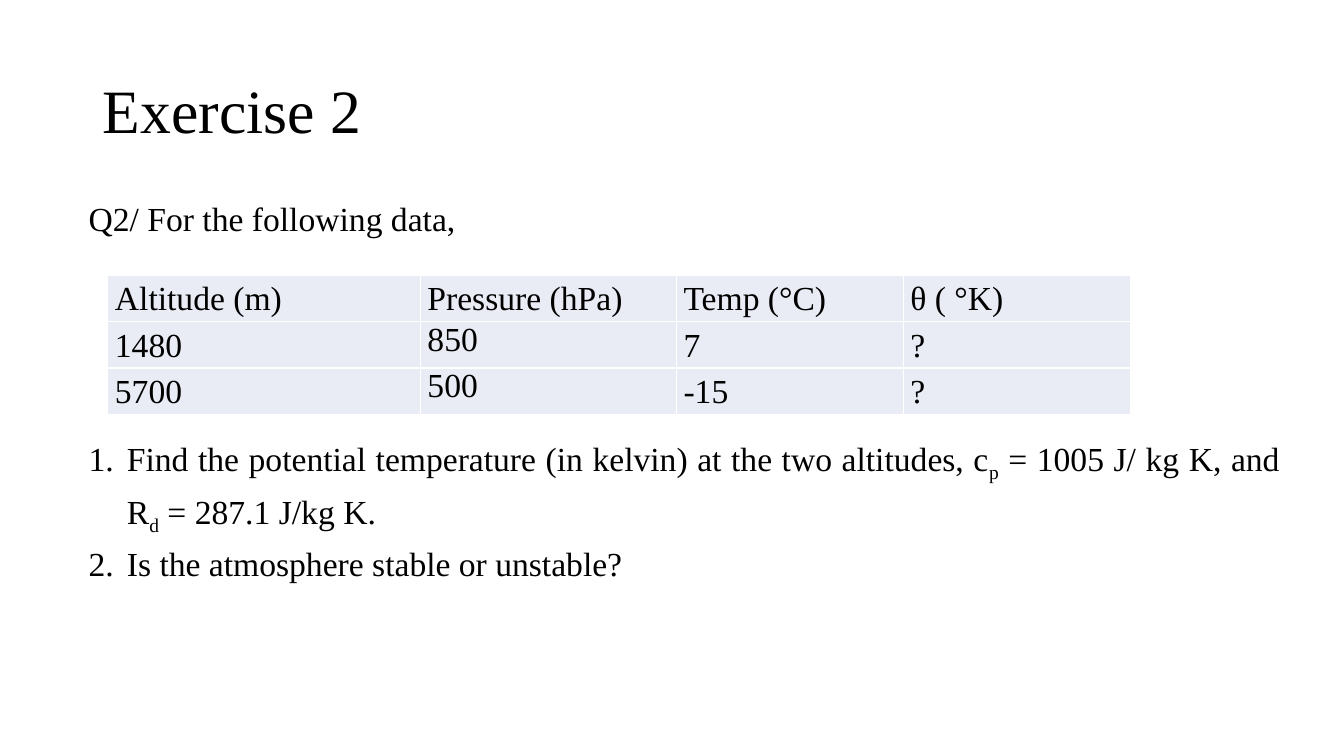
from lxml import etree
from pptx import Presentation
from pptx.dml.color import RGBColor
from pptx.enum.text import MSO_ANCHOR, PP_ALIGN
from pptx.oxml.ns import qn
from pptx.util import Inches, Pt

LEFT, JUSTIFY = PP_ALIGN.LEFT, PP_ALIGN.JUSTIFY
TOP, MIDDLE = MSO_ANCHOR.TOP, MSO_ANCHOR.MIDDLE
FONT = "Times New Roman"
BLACK, WHITE, CELL_FILL = "000000", "FFFFFF", "E9EBF5"
BODY_SIZE = 24
TITLE_ONLY = 5

COLUMN_WIDTHS = [3.1, 2.54, 2.25, 2.25]
ROW_HEIGHT = 0.46
ROWS = [
    ["Altitude (m)", "Pressure (hPa)", "Temp (°C)", "θ ( °K)"],
    ["1480", "850", "7", "?"],
    ["5700", "500", "-15", "?"],
]
PRESSURE_COLUMN = 1

# Each question is a list of (text, is subscript) runs.
QUESTIONS = [
    [
        ("Find the potential temperature (in kelvin) at the two altitudes, c", False),
        ("p", True),
        (" = 1005 J/ kg K, and R", False),
        ("d", True),
        (" = 287.1 J/kg K.", False),
    ],
    [("Is the atmosphere stable or unstable?", False)],
]


def color(value):
    return RGBColor.from_string(value)


def add_run(paragraph, text, size=BODY_SIZE, subscript=False):
    run = paragraph.add_run()
    run.text = text
    run.font.name = FONT
    run.font.size = Pt(size)
    run.font.color.rgb = color(BLACK)
    if subscript:
        run.font._element.set("baseline", "-25000")


def number_paragraph(paragraph, indent):
    """Give the paragraph an automatic number in a hanging indent."""
    properties = paragraph._p.get_or_add_pPr()
    properties.set("marL", str(Inches(indent)))
    properties.set("indent", str(Inches(-indent)))
    bullet_font = etree.SubElement(properties, qn("a:buFont"))
    bullet_font.set("typeface", "+mj-lt")
    numbering = etree.SubElement(properties, qn("a:buAutoNum"))
    numbering.set("type", "arabicPeriod")


def set_borders(cell, value, width):
    properties = cell._tc.get_or_add_tcPr()
    for position, side in enumerate(("a:lnL", "a:lnR", "a:lnT", "a:lnB")):
        line = etree.Element(qn(side), w=str(Pt(width)))
        fill = etree.SubElement(line, qn("a:solidFill"))
        etree.SubElement(fill, qn("a:srgbClr"), val=value)
        properties.insert(position, line)


def place_title(slide, left, top, width, height):
    title = slide.shapes.title
    title.left, title.top = Inches(left), Inches(top)
    title.width, title.height = Inches(width), Inches(height)
    frame = title.text_frame
    frame.word_wrap = True
    frame.vertical_anchor = MIDDLE
    paragraph = frame.paragraphs[0]
    paragraph.alignment = LEFT
    paragraph.line_spacing = 0.9
    add_run(paragraph, "Exercise 2", size=44)


def add_exercise_text(slide, left, top, width, height):
    """Add the introduction and questions, leaving room for the table between."""
    box = slide.shapes.add_textbox(
        Inches(left), Inches(top), Inches(width), Inches(height))
    frame = box.text_frame
    frame.word_wrap = True
    frame.vertical_anchor = TOP
    introduction = frame.paragraphs[0]
    introduction.alignment = JUSTIFY
    introduction.space_after = Pt(138)
    add_run(introduction, "Q2/ For the following data,")
    for question in QUESTIONS:
        paragraph = frame.add_paragraph()
        paragraph.alignment = JUSTIFY
        paragraph.line_spacing = 1.15
        number_paragraph(paragraph, 0.38)
        for text, subscript in question:
            add_run(paragraph, text, subscript=subscript)


def fill_cell(cell, text, is_plain):
    cell.fill.solid()
    cell.fill.fore_color.rgb = color(CELL_FILL)
    cell.margin_left = cell.margin_right = Inches(0.07)
    cell.margin_top = cell.margin_bottom = 0
    cell.vertical_anchor = TOP
    set_borders(cell, WHITE, 1)
    paragraph = cell.text_frame.paragraphs[0]
    if is_plain:
        paragraph.alignment = LEFT
    else:
        paragraph.alignment = JUSTIFY
        paragraph.line_spacing = 1.15
        paragraph.space_after = Pt(10)
    add_run(paragraph, text)


def add_data_table(slide, left, top):
    table = slide.shapes.add_table(
        len(ROWS), len(COLUMN_WIDTHS), Inches(left), Inches(top),
        Inches(sum(COLUMN_WIDTHS)), Inches(ROW_HEIGHT * len(ROWS))).table
    for column, width in zip(table.columns, COLUMN_WIDTHS):
        column.width = Inches(width)
    for row_index, values in enumerate(ROWS):
        table.rows[row_index].height = Inches(ROW_HEIGHT)
        for column_index, text in enumerate(values):
            is_plain = row_index > 0 and column_index == PRESSURE_COLUMN
            fill_cell(table.cell(row_index, column_index), text, is_plain)


def main():
    presentation = Presentation()
    presentation.slide_width = Inches(13.33)
    presentation.slide_height = Inches(7.5)
    slide = presentation.slides.add_slide(presentation.slide_layouts[TITLE_ONLY])
    slide.background.fill.solid()
    slide.background.fill.fore_color.rgb = color(WHITE)
    place_title(slide, 0.92, 0.4, 11.5, 1.45)
    add_exercise_text(slide, 0.78, 1.91, 12.01, 4.46)
    add_data_table(slide, 1.07, 2.73)
    presentation.save("out.pptx")


if __name__ == "__main__":
    main()
